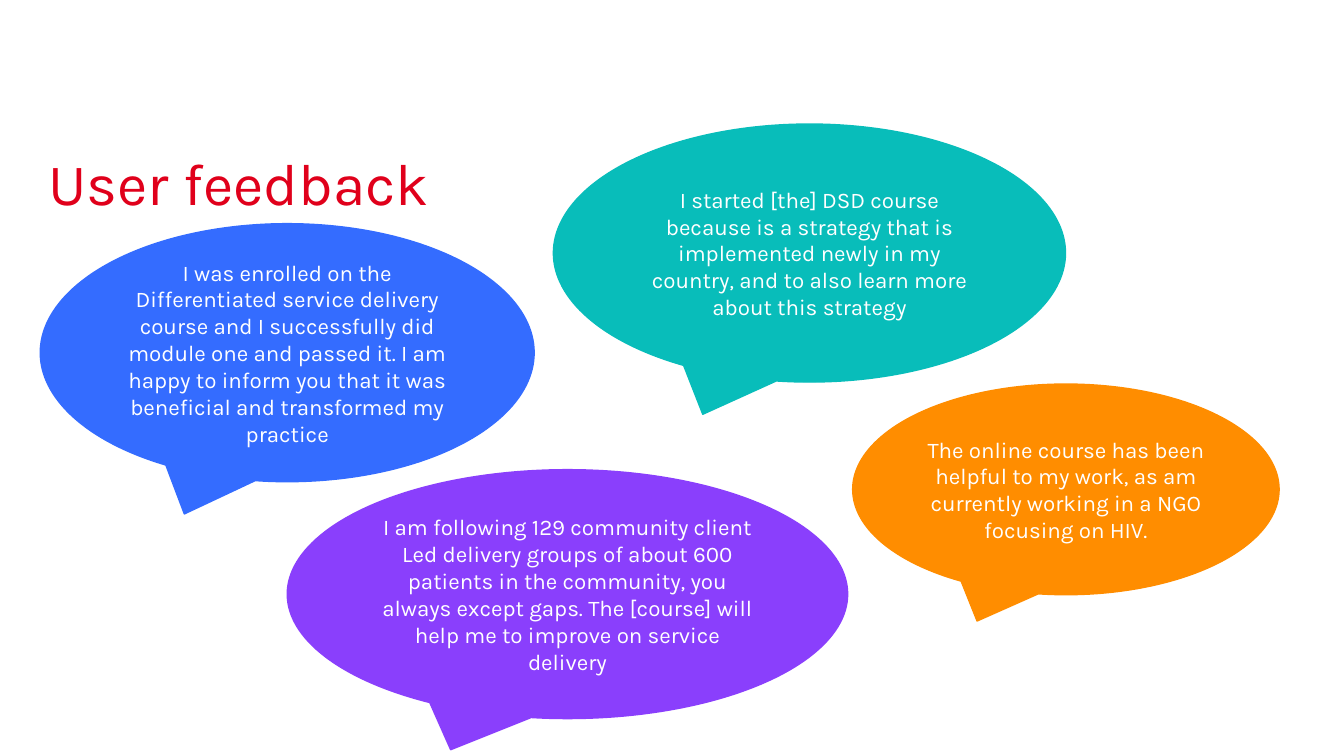
from pptx import Presentation
from pptx.dml.color import RGBColor
from pptx.enum.shapes import MSO_SHAPE
from pptx.enum.text import MSO_ANCHOR, PP_ALIGN
from pptx.util import Pt

CALLOUT = MSO_SHAPE.OVAL_CALLOUT
MIDDLE = MSO_ANCHOR.MIDDLE
CENTER = PP_ALIGN.CENTER

FONT = "Karla"
RED = "E0001B"
WHITE = "FFFFFF"

# Each quote: left, top, width, height, colour, text
QUOTES = [
    (609.1, 274.3, 304.6, 150.5, "FF8D00",
     "The online course has been helpful to my work, as am currently "
     "working in a NGO focusing on HIV."),
    (28.8, 159.8, 352.8, 184.3, "346CFF",
     "I was enrolled on the Differentiated service delivery course and I "
     "successfully did module one and passed it. I am happy to inform you "
     "that it was beneficial and transformed my practice"),
    (395.3, 88.6, 365.8, 184.3, "08BDBA",
     "I started [the] DSD course because is a strategy that is implemented "
     "newly in my country, and to also learn more about this strategy"),
    (205.2, 335.5, 400.3, 177.8, "8A3FFC",
     "I am following 129 community client Led delivery groups of about 600 "
     "patients in the community, you always except gaps. The [course] will "
     "help me to improve on service delivery"),
]


def color(hex_string):
    return RGBColor.from_string(hex_string)


def write_text(text_frame, text, size, hex_color):
    text_frame.word_wrap = True
    paragraph = text_frame.paragraphs[0]
    paragraph.text = text
    paragraph.font.name = FONT
    paragraph.font.size = Pt(size)
    paragraph.font.color.rgb = color(hex_color)
    return paragraph


def add_title(slide, text):
    box = slide.shapes.add_textbox(Pt(34.6), Pt(110.2), Pt(487.4), Pt(99.4))
    frame = box.text_frame
    frame.margin_left = frame.margin_right = Pt(0)
    frame.margin_top = frame.margin_bottom = Pt(0)
    paragraph = write_text(frame, text, 42, RED)
    paragraph.line_spacing = 0.9


def add_quote(slide, left, top, width, height, fill, text):
    bubble = slide.shapes.add_shape(
        CALLOUT, Pt(left), Pt(top), Pt(width), Pt(height))
    bubble.shadow.inherit = False
    bubble.fill.solid()
    bubble.fill.fore_color.rgb = color(fill)
    bubble.line.color.rgb = color(fill)
    bubble.line.width = Pt(1)
    bubble.text_frame.vertical_anchor = MIDDLE
    paragraph = write_text(bubble.text_frame, text, 16, WHITE)
    paragraph.alignment = CENTER


def main():
    presentation = Presentation()
    presentation.slide_width = Pt(960)
    presentation.slide_height = Pt(540)
    slide = presentation.slides.add_slide(presentation.slide_layouts[6])
    add_title(slide, "User feedback")
    for quote in QUOTES:
        add_quote(slide, *quote)
    presentation.save("out.pptx")


if __name__ == "__main__":
    main()
